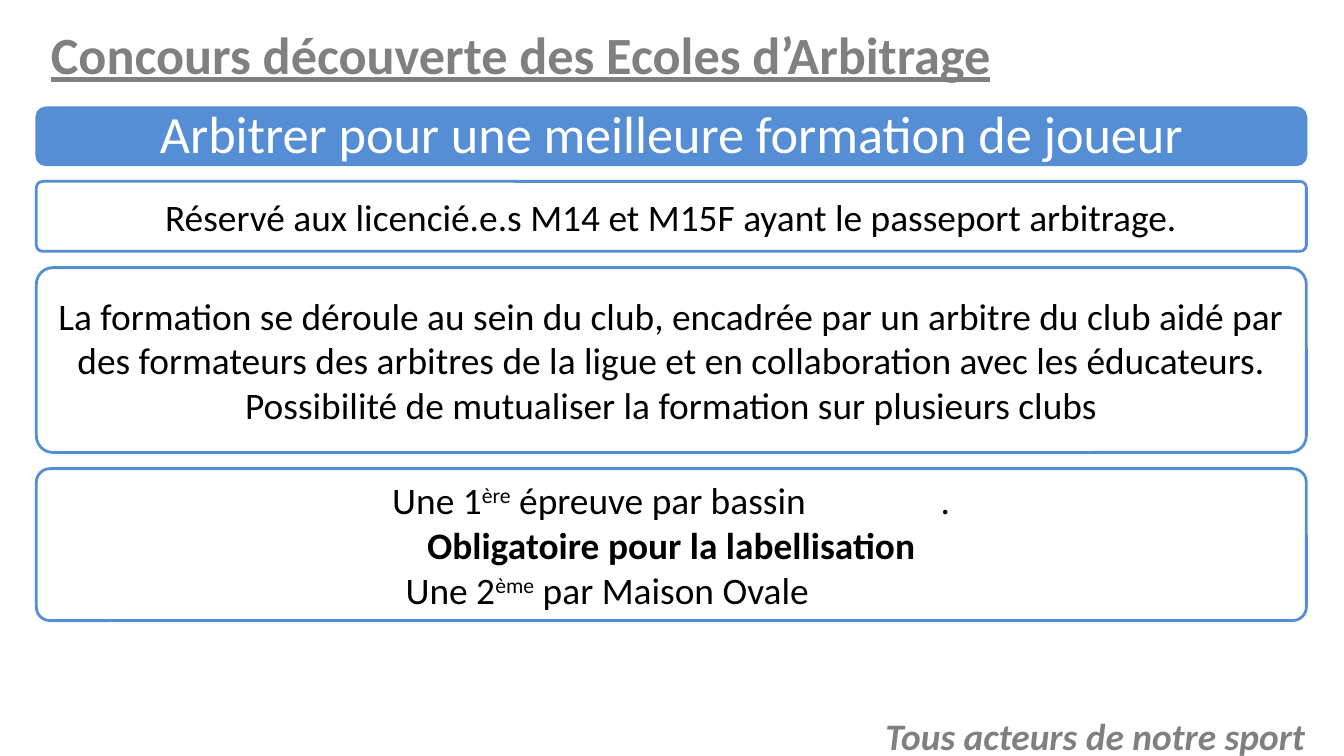
from dataclasses import dataclass

import pptx
import pptx.dml.color
import pptx.enum.shapes
import pptx.enum.text
import pptx.oxml.ns
import pptx.util
from lxml import etree

W = 10
H = W * 9 / 16
LEFT, WIDTH = 2.7, 94.5
FIRST_ROW, GAP = 14.2, 2.15
COLORS = {"blue": "558ED5", "white": "FFFFFF", "black": "000000", "gray": "808080"}
ALIGN = pptx.enum.text.PP_ALIGN
ANCHOR = pptx.enum.text.MSO_ANCHOR


@dataclass(frozen=True)
class Run:
    text: str
    raised: bool = False


@dataclass(frozen=True)
class Para:
    runs: tuple[Run, ...]
    size: int = 20
    color: str = "black"
    bold: bool = False
    italic: bool = False
    underline: bool = False
    centered: bool = True
    tabs: tuple[float, ...] = ()


@dataclass(frozen=True)
class Panel:
    height: float
    paras: tuple[Para, ...]
    filled: bool = False


def line(text: str, **style) -> Para:
    return Para((Run(text),), **style)


def rgb(name: str) -> pptx.dml.color.RGBColor:
    return pptx.dml.color.RGBColor.from_string(COLORS[name])


def area(left: float, top: float, width: float, height: float) -> list[int]:
    return [pptx.util.Inches(share * side / 100)
            for share, side in ((left, W), (top, H), (width, W), (height, H))]


def write(sp, paras: tuple[Para, ...]) -> None:
    tf = sp.text_frame
    tf.word_wrap = True
    for i, para in enumerate(paras):
        p = tf.paragraphs[0] if i == 0 else tf.add_paragraph()
        p.alignment = ALIGN.CENTER if para.centered else ALIGN.LEFT
        if para.tabs:
            stops = etree.SubElement(p._p.get_or_add_pPr(), pptx.oxml.ns.qn("a:tabLst"))
            for share in para.tabs:
                etree.SubElement(stops, pptx.oxml.ns.qn("a:tab"),
                                 pos=str(pptx.util.Inches(share * W / 100)), algn="l")
        f = p.font
        f.name, f.size = "Calibri", pptx.util.Pt(para.size)
        f.bold, f.italic, f.underline = para.bold, para.italic, para.underline
        f.color.rgb = rgb(para.color)
        for run in para.runs:
            r = p.add_run()
            r.text = run.text
            if run.raised:
                r.font._element.set("baseline", "30000")


def add_label(s, box: list[int], para: Para, anchor: ANCHOR) -> None:
    sp = s.shapes.add_textbox(*box)
    sp.text_frame.vertical_anchor = anchor
    write(sp, (para,))


def add_panel(s, top: float, panel: Panel) -> None:
    sp = s.shapes.add_shape(pptx.enum.shapes.MSO_SHAPE.ROUNDED_RECTANGLE,
                            *area(LEFT, top, WIDTH, panel.height))
    sp.shadow.inherit = False
    sp.line.color.rgb = rgb("blue")
    tf = sp.text_frame
    tf.vertical_anchor = ANCHOR.MIDDLE
    write(sp, panel.paras)
    if panel.filled:
        sp.fill.solid()
        sp.fill.fore_color.rgb = rgb("blue")
        sp.line.width = pptx.util.Pt(1)
        tf.margin_left = tf.margin_right = pptx.util.Inches(0.08)
        tf.margin_top = tf.margin_bottom = pptx.util.Inches(0.08)
        tf.paragraphs[0].line_spacing = 0.9
        tf.paragraphs[0].space_after = pptx.util.Pt(10)
    else:
        sp.fill.background()
        sp.line.width = pptx.util.Pt(1.5)
        sp.adjustments[0] = 0.09


PANELS = (
    Panel(7.65, (line("Arbitrer pour une meilleure formation de joueur",
                      size=28, color="white"),), filled=True),
    Panel(9.25, (line("Réservé aux licencié.e.s M14 et M15F ayant le passeport arbitrage."),)),
    Panel(24.45, (
        line("La formation se déroule au sein du club, encadrée par un arbitre du club "
             "aidé par des formateurs des arbitres de la ligue et en collaboration "
             "avec les éducateurs."),
        line("Possibilité de mutualiser la formation sur plusieurs clubs"),
    )),
    Panel(20.1, (
        Para((Run("\tUne 1"), Run("ère", True), Run(" épreuve par bassin\t.")),
             centered=False, tabs=(25.2, 66)),
        line("Obligatoire pour la labellisation", bold=True),
        Para((Run("\tUne 2"), Run("ème", True), Run(" par Maison Ovale")),
             centered=False, tabs=(26.2,)),
    )),
)


def main() -> None:
    prs = pptx.Presentation()
    prs.slide_width, prs.slide_height = pptx.util.Inches(W), pptx.util.Inches(H)
    s = prs.slides.add_slide(prs.slide_layouts[6])
    add_label(s, area(2.8, 2.4, WIDTH, 9.4),
              line("Concours découverte des Ecoles d’Arbitrage", size=28, color="gray",
                   bold=True, underline=True, centered=False), ANCHOR.MIDDLE)
    top = FIRST_ROW
    for panel in PANELS:
        add_panel(s, top, panel)
        top += panel.height + GAP
    add_label(s, area(64.2, 93.4, 34.6, 6.6),
              line("Tous acteurs de notre sport", color="gray", bold=True, italic=True),
              ANCHOR.TOP)
    prs.save("out.pptx")


if __name__ == "__main__":
    main()
